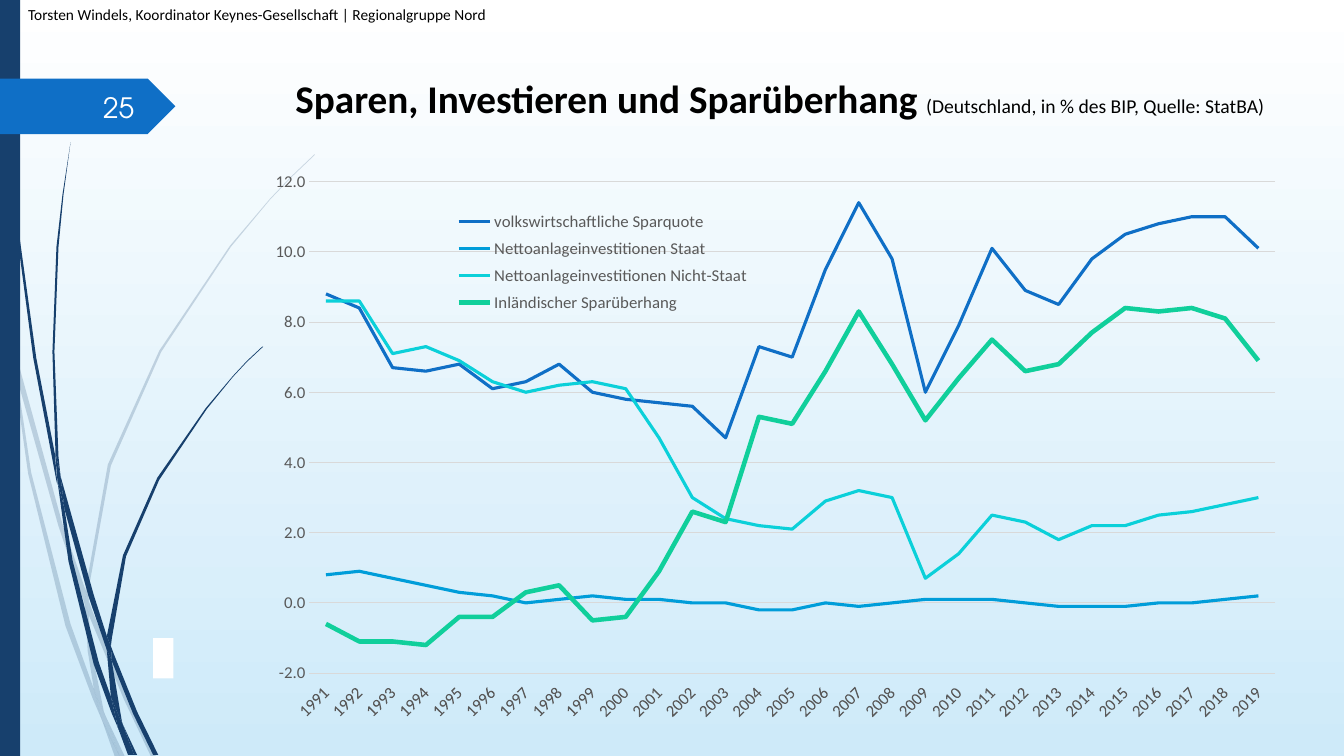
from lxml import etree
from pptx import Presentation
from pptx.chart.data import CategoryChartData
from pptx.dml.color import RGBColor
from pptx.enum.chart import XL_CHART_TYPE, XL_LEGEND_POSITION, XL_TICK_LABEL_POSITION, XL_TICK_MARK
from pptx.enum.shapes import MSO_SHAPE
from pptx.enum.text import MSO_ANCHOR, PP_ALIGN
from pptx.oxml.ns import qn
from pptx.util import Pt

PX = 9144  # 100 px to the inch
NAVY = RGBColor(0x17, 0x40, 0x6D)
BLUE = RGBColor(0x0F, 0x6F, 0xC6)
SKY = RGBColor(0x00, 0x9D, 0xD9)
TEAL = RGBColor(0x0B, 0xD0, 0xD9)
GREEN = RGBColor(0x10, 0xCF, 0x9B)
WHITE = RGBColor(0xFF, 0xFF, 0xFF)
PALE = RGBColor(0xCE, 0xEA, 0xF9)
BLACK = RGBColor(0, 0, 0)
GREY = RGBColor(0x59, 0x59, 0x59)
RULE = RGBColor(0xD9, 0xD9, 0xD9)
RECT, ARROW = MSO_SHAPE.RECTANGLE, MSO_SHAPE.PENTAGON
TOP, MID = MSO_ANCHOR.TOP, MSO_ANCHOR.MIDDLE
LEFT, RIGHT = PP_ALIGN.LEFT, PP_ALIGN.RIGHT
LINE, BOTTOM = XL_CHART_TYPE.LINE, XL_LEGEND_POSITION.BOTTOM
LOW, NO_TICK = XL_TICK_LABEL_POSITION.LOW, XL_TICK_MARK.NONE

prs = Presentation()
prs.slide_width, prs.slide_height = 1333 * PX, 750 * PX
slide = prs.slides.add_slide(prs.slide_layouts[5])
shapes = slide.shapes

# Background
back = slide.background.fill
back.gradient()
back.gradient_angle = 270
for stop, tone, place in zip(back.gradient_stops, (WHITE, PALE), (0, 1)):
    stop.color.rgb = tone
    stop.position = place

# Blades of grass, piece by piece: first the faint tuft, then the dark one
faint = [
    [(11, 350), (9, 322), (0, 282), (0, 299), (10, 344)],
    [(58, 522), (84, 599), (85, 586), (62, 520), (14, 345), (17, 376)],
    [(92, 607), (88, 596), (88, 610), (123, 694), (150, 751), (155, 751), (127, 692)],
    [(119, 751), (124, 751), (105, 711)],
    [(93, 683), (70, 619), (31, 469), (17, 376), (11, 350), (28, 470), (65, 621), (92, 693),
     (101, 714), (99, 707)],
    [(84, 599), (87, 646), (93, 683), (96, 692), (105, 711), (103, 706), (91, 646), (88, 610),
     (88, 608)],
    [(88, 584), (110, 462), (160, 349), (229, 245), (268, 198), (290, 175), (312, 154),
     (312, 153), (289, 175), (268, 197), (228, 244), (158, 348), (107, 461), (85, 584),
     (85, 586), (88, 596)],
    [(101, 714), (114, 751), (119, 751)],
    [(88, 608), (88, 610), (88, 596), (85, 586), (84, 599)],
    [(96, 692), (93, 683), (99, 707), (101, 714), (119, 751), (105, 711)],
]
dark = [
    [(7, 110), (17, 233), (33, 355), (56, 477), (57, 481), (55, 457), (55, 453), (36, 355),
     (19, 232), (8, 109), (5, 48), (4, 0), (3, 0), (4, 48)],
    [(88, 592), (106, 645), (106, 633), (106, 631), (93, 590), (60, 472), (64, 505)],
    [(113, 649), (110, 641), (111, 656), (132, 708), (152, 749), (157, 749), (136, 706)],
    [(110, 691), (98, 657), (72, 556), (64, 505), (57, 477), (68, 557), (93, 659), (111, 708),
     (117, 722), (116, 717)],
    [(60, 472), (58, 453), (54, 349), (58, 245), (63, 193), (70, 141), (62, 193), (56, 245),
     (52, 349), (55, 449)],
    [(133, 749), (136, 749), (122, 719)],
    [(57, 477), (64, 505), (60, 472), (55, 449), (55, 453)],
    [(111, 633), (125, 552), (158, 476), (205, 406), (231, 374), (245, 359), (261, 344),
     (260, 344), (245, 358), (231, 373), (204, 405), (156, 474), (122, 551), (106, 631),
     (110, 641)],
    [(117, 722), (127, 749), (131, 749)],
    [(106, 645), (110, 691), (116, 706), (122, 719), (121, 716), (111, 656), (109, 651)],
    [(106, 645), (109, 651), (111, 656), (110, 641), (106, 631), (106, 633)],
    [(116, 706), (110, 691), (116, 717), (117, 722), (130, 749), (133, 749), (122, 719)],
]
for tuft, alpha in ((faint, 20), (dark, 100)):
    for rim in tuft:
        pen = shapes.build_freeform(*rim[0], scale=PX)
        pen.add_line_segments(rim[1:], close=True)
        blade = pen.convert_to_shape()
        blade.shadow.inherit = False
        blade.fill.solid()
        blade.fill.fore_color.rgb = NAVY
        blade.line.fill.background()
        if alpha < 100:
            tint = blade._element.spPr.find(qn("a:solidFill"))[0]
            etree.SubElement(tint, qn("a:alpha"), val=str(alpha * 1000))

# Side bar, number arrow and white block
for kind, box, tone in [(RECT, (0, 0, 20, 750), NAVY),
                        (ARROW, (0, 78, 174, 55), BLUE),
                        (RECT, (152, 633, 20, 40), WHITE)]:
    block = shapes.add_shape(kind, *(n * PX for n in box))
    block.shadow.inherit = False
    block.fill.solid()
    block.fill.fore_color.rgb = tone
    block.line.fill.background()

# Title, slide number and header
title = shapes.title
title.left, title.top, title.width, title.height = (n * PX for n in (283, 69, 992, 73))
number = shapes.add_textbox(58 * PX, 86 * PX, 85 * PX, 40 * PX)
header = shapes.add_textbox(18 * PX, 0, 833 * PX, 40 * PX)
base = {"name": "Calibri", "bold": False}
texts = [
    (title, TOP, LEFT, BLACK, [
        ("Sparen, Investieren und Sparüberhang ", {"size": Pt(28), "bold": True}),
        ("(Deutschland, in % des BIP, Quelle: StatBA)", {"size": Pt(14)})]),
    (number, MID, RIGHT, WHITE, [("25", {"size": Pt(20), "name": "TeX Gyre Adventor"})]),
    (header, TOP, LEFT, BLACK, [
        ("Torsten Windels, Koordinator Keynes-Gesellschaft | Regionalgruppe Nord",
         {"size": Pt(11)})]),
]
for shape, anchor, align, tone, runs in texts:
    frame = shape.text_frame
    frame.word_wrap = True
    frame.vertical_anchor = anchor
    para = frame.paragraphs[0]
    para.alignment = align
    for words, style in runs:
        run = para.add_run()
        run.text = words
        run.font.color.rgb = tone
        for key, value in {**base, **style}.items():
            setattr(run.font, key, value)

# Line chart
series = [
    ("volkswirtschaftliche Sparquote", BLUE, 2.25,
     [8.8, 8.4, 6.7, 6.6, 6.8, 6.1, 6.3, 6.8, 6, 5.8, 5.7, 5.6, 4.7, 7.3, 7, 9.5, 11.4, 9.8, 6,
      7.9, 10.1, 8.9, 8.5, 9.8, 10.5, 10.8, 11, 11, 10.1]),
    ("Nettoanlageinvestitionen Staat", SKY, 2.25,
     [0.8, 0.9, 0.7, 0.5, 0.3, 0.2, 0, 0.1, 0.2, 0.1, 0.1, 0, 0, -0.2, -0.2, 0, -0.1, 0, 0.1,
      0.1, 0.1, 0, -0.1, -0.1, -0.1, 0, 0, 0.1, 0.2]),
    ("Nettoanlageinvestitionen Nicht-Staat", TEAL, 2.25,
     [8.6, 8.6, 7.1, 7.3, 6.9, 6.3, 6, 6.2, 6.3, 6.1, 4.7, 3, 2.4, 2.2, 2.1, 2.9, 3.2, 3, 0.7,
      1.4, 2.5, 2.3, 1.8, 2.2, 2.2, 2.5, 2.6, 2.8, 3]),
    ("Inländischer Sparüberhang", GREEN, 3.25,
     [-0.6, -1.1, -1.1, -1.2, -0.4, -0.4, 0.3, 0.5, -0.5, -0.4, 0.9, 2.6, 2.3, 5.3, 5.1, 6.6,
      8.3, 6.8, 5.2, 6.4, 7.5, 6.6, 6.8, 7.7, 8.4, 8.3, 8.4, 8.1, 6.9]),
]
data = CategoryChartData(number_format="0.0")
data.categories = [str(year) for year in range(1991, 2020)]
for name, tone, width, values in series:
    data.add_series(name, values)
chart = shapes.add_chart(LINE, *(n * PX for n in (262, 165, 1018, 550)), data).chart
chart.has_title = False
chart.has_legend = True
legend = chart.legend
legend.position = BOTTOM
legend.include_in_layout = False
chart.plots[0].vary_by_categories = False
for curve, (name, tone, width, values) in zip(chart.plots[0].series, series):
    curve.smooth = False
    curve.format.line.color.rgb = tone
    curve.format.line.width = Pt(width)

# Axes
years, rates = chart.category_axis, chart.value_axis
for axis in (years, rates):
    axis.major_tick_mark = axis.minor_tick_mark = NO_TICK
for key, value in {"minimum_scale": -2, "maximum_scale": 12, "major_unit": 2}.items():
    setattr(rates, key, value)
years.tick_label_position = LOW
rates.tick_labels.number_format = "0.0"
rates.tick_labels.number_format_is_linked = False
rates.format.line.fill.background()
for rule in (years.format.line, rates.major_gridlines.format.line):
    rule.color.rgb = RULE
    rule.width = Pt(0.75)
for font in (chart.font, years.tick_labels.font, rates.tick_labels.font, legend.font):
    font.name, font.size, font.color.rgb = "Calibri", Pt(12), GREY
years._element.find(qn("c:txPr")).find(qn("a:bodyPr")).set("rot", "-2700000")

# Places of plot and legend as shares of the chart
for part, spot, inner, shares in [
        (chart._chartSpace.chart.plotArea, 0, True, (0.044, 0.028, 0.941, 0.897)),
        (legend._element, 1, False, (0.185, 0.07, 0.29, 0.21))]:
    for old in part.findall(qn("c:layout")):
        part.remove(old)
    layout = etree.Element(qn("c:layout"))
    manual = etree.SubElement(layout, qn("c:manualLayout"))
    if inner:
        etree.SubElement(manual, qn("c:layoutTarget"), val="inner")
    for mode in ("xMode", "yMode"):
        etree.SubElement(manual, qn("c:" + mode), val="edge")
    for key, share in zip("xywh", shares):
        etree.SubElement(manual, qn("c:" + key), val=str(share))
    part.insert(spot, layout)

prs.save("out.pptx")
